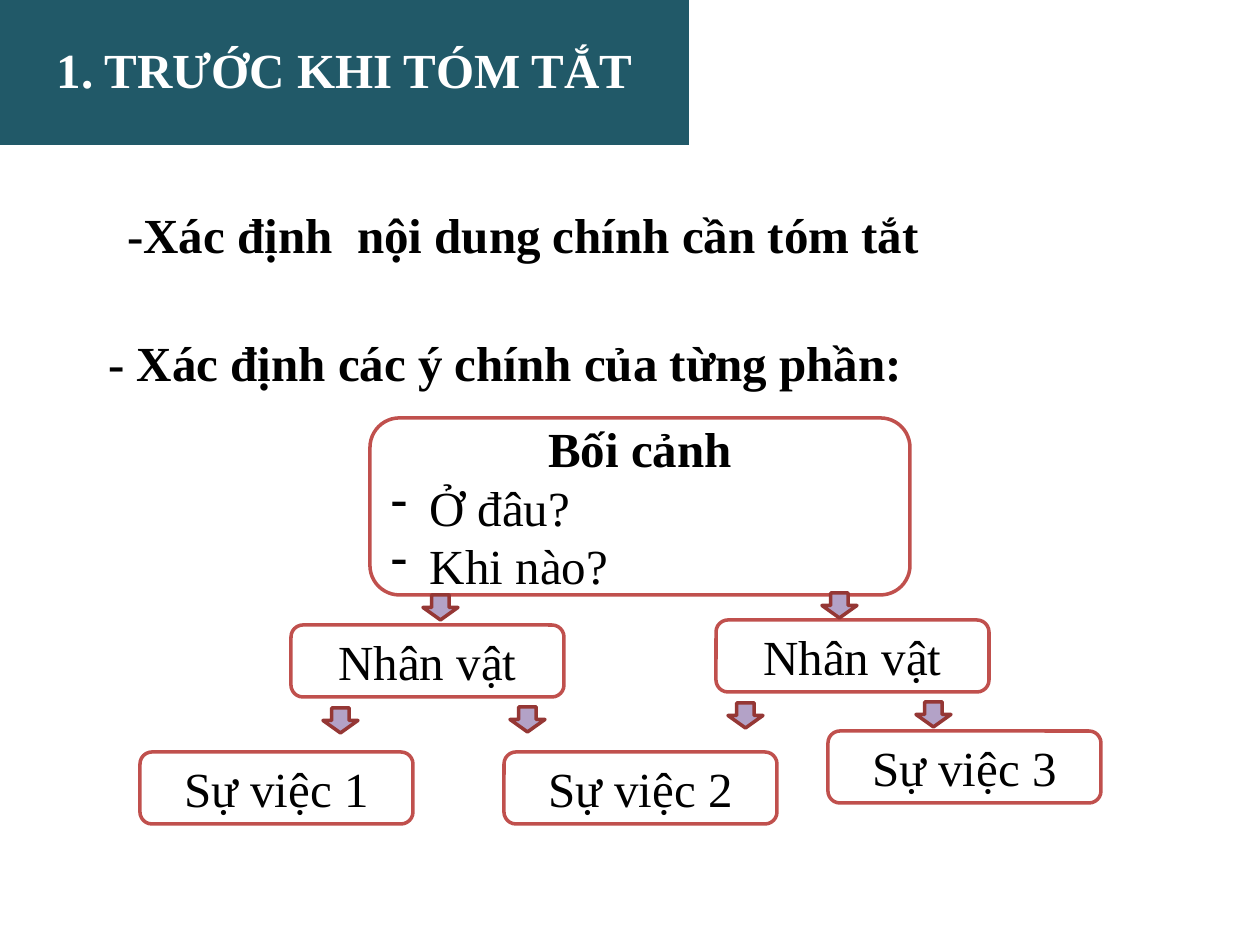
from lxml.etree import SubElement
from pptx import Presentation
from pptx.dml.color import RGBColor
from pptx.enum.shapes import MSO_SHAPE
from pptx.enum.text import MSO_ANCHOR, PP_ALIGN
from pptx.oxml.ns import qn
from pptx.util import Pt

SCALE = 914400 / 126
FONT = "Times New Roman"
COLORS = {
    "teal": "215968", "white": "FFFFFF", "black": "000000",
    "red": "C0504D", "lilac": "B3A2C7", "maroon": "953735",
}


def px(n):
    return round(n * SCALE)


def color(name):
    return RGBColor.from_string(COLORS[name])


def shape(slide, kind, box, fill, line=None):
    item = slide.shapes.add_shape(kind, *map(px, box))
    item.shadow.inherit = False
    item.fill.solid()
    item.fill.fore_color.rgb = color(fill)
    if line:
        item.line.color.rgb = color(line)
        item.line.width = Pt(2)
    else:
        item.line.fill.background()
    return item


def write(para, text, bold=False, ink="black", align=PP_ALIGN.LEFT, space=None):
    para.text = text
    para.alignment = align
    para.line_spacing = space
    font = para.font
    font.name, font.size, font.bold = FONT, Pt(28), bold
    font.color.rgb = color(ink)


def indent(para, first, left=0):
    props = para._p.get_or_add_pPr()
    props.set("marL", str(px(left)))
    props.set("indent", str(px(first)))
    return props


def title(slide, box):
    bar = shape(slide, MSO_SHAPE.RECTANGLE, box, "teal")
    frame = bar.text_frame
    frame.word_wrap = True
    frame.vertical_anchor = MSO_ANCHOR.MIDDLE
    frame.margin_left = frame.margin_right = px(3)
    frame.margin_top = frame.margin_bottom = px(3)
    write(frame.paragraphs[0], "1. TRƯỚC KHI TÓM TẮT", True, "white",
          PP_ALIGN.CENTER, 0.9)


def point(slide, box):
    frame = slide.shapes.add_textbox(*map(px, box)).text_frame
    frame.word_wrap = True
    write(frame.paragraphs[0], "-Xác định  nội dung chính cần tóm tắt", True,
          space=1.5)


def card(slide, box, text):
    item = shape(slide, MSO_SHAPE.ROUNDED_RECTANGLE, box, "white", "red")
    frame = item.text_frame
    frame.word_wrap = True
    frame.vertical_anchor = MSO_ANCHOR.MIDDLE
    head = frame.paragraphs[0]
    write(head, text, align=PP_ALIGN.CENTER)
    return frame


def context(slide, box):
    frame = card(slide, box, "Bối cảnh")
    frame.paragraphs[0].font.bold = True
    for text in ("Ở đâu?", "Khi nào?"):
        para = frame.add_paragraph()
        write(para, text)
        props = indent(para, -39, 39)
        SubElement(props, qn("a:buFontTx"))
        SubElement(props, qn("a:buChar")).set("char", "-")


def diagram(slide, box):
    left, top = box[:2]

    # Panel with its heading
    panel = shape(slide, MSO_SHAPE.RECTANGLE, box, "white")
    frame = panel.text_frame
    frame.word_wrap = True
    frame.vertical_anchor = MSO_ANCHOR.TOP
    head = frame.paragraphs[0]
    write(head, "- Xác định các ý chính của từng phần:", True,
          align=PP_ALIGN.JUSTIFY, space=1.5)
    indent(head, 61)

    # Setting, then characters and events
    context(slide, (left + 335, top + 121, 540, 177))
    cards = [
        ("Nhân vật", 256, 328), ("Nhân vật", 681, 323),
        ("Sự việc 1", 105, 455), ("Sự việc 2", 469, 455),
        ("Sự việc 3", 793, 434),
    ]
    for text, x, y in cards:
        card(slide, (left + x, top + y, 273, 72), text)

    # Arrows between the levels
    arrows = [(388, 298), (787, 296), (288, 411),
              (475, 410), (693, 406), (881, 405)]
    for x, y in arrows:
        shape(slide, MSO_SHAPE.DOWN_ARROW, (left + x, top + y, 35, 25),
              "lilac", "maroon")


def main():
    deck = Presentation()
    deck.slide_width, deck.slide_height = px(1260), px(945)
    slide = deck.slides.add_slide(deck.slide_layouts[6])
    title(slide, (0, 0, 689, 145))
    point(slide, (115, 169, 908, 91))
    diagram(slide, (35, 297, 1074, 547))
    deck.save("out.pptx")


if __name__ == "__main__":
    main()
